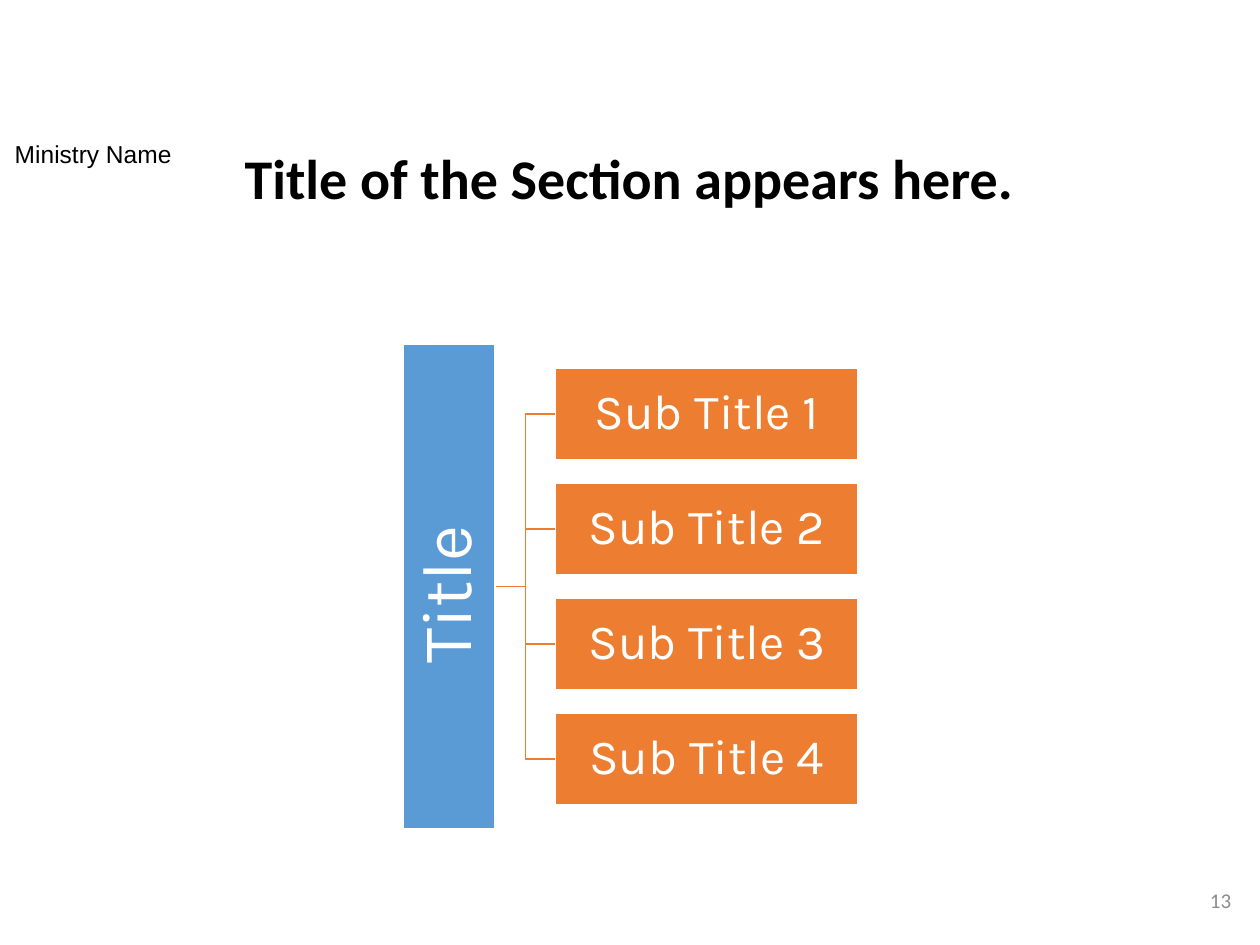
from dataclasses import dataclass

from pptx import Presentation
from pptx.dml.color import RGBColor
from pptx.enum.shapes import MSO_SHAPE
from pptx.enum.text import MSO_ANCHOR, MSO_AUTO_SIZE, PP_ALIGN
from pptx.util import Inches, Pt


@dataclass(frozen=True)
class Theme:
    blue: str = "5B9BD5"
    orange: str = "ED7D31"
    white: str = "FFFFFF"
    black: str = "000000"
    gray: str = "8C8C8C"
    head: str = "Calibri"
    label: str = "Arial"
    tree: str = "Karla"
    title: int = 32
    name: int = 14
    number: int = 12
    root: int = 40
    leaf: int = 28
    line: int = 1


THEME = Theme()


def color(code):
    return RGBColor.from_string(code)


def write(shape, text, face, size, ink, align=PP_ALIGN.CENTER,
          anchor=MSO_ANCHOR.MIDDLE, bold=False, inset=None):
    frame = shape.text_frame
    frame.text = text
    frame.word_wrap = True
    frame.auto_size = MSO_AUTO_SIZE.NONE
    frame.vertical_anchor = anchor
    if inset is not None:
        frame.margin_left = frame.margin_right = inset
        frame.margin_top = frame.margin_bottom = inset
    para = frame.paragraphs[0]
    para.alignment = align
    para.line_spacing = 0.9
    para.space_before = Pt(0)
    font = para.runs[0].font
    font.name, font.size, font.bold = face, Pt(size), bold
    font.color.rgb = color(ink)


def add_title(slide, left, top, width, height):
    title = slide.shapes.title
    title.left, title.top, title.width, title.height = left, top, width, height
    write(title, "Title of the Section appears here.", THEME.head, THEME.title,
          THEME.black, anchor=MSO_ANCHOR.TOP, bold=True)


def add_name(slide, left, top, width, height):
    box = slide.shapes.add_textbox(left, top, width, height)
    write(box, "Ministry Name", THEME.label, THEME.name, THEME.black,
          anchor=MSO_ANCHOR.TOP)


def add_number(slide, left, top, width, height):
    box = slide.shapes.add_textbox(left, top, width, height)
    write(box, "13", THEME.head, THEME.number, THEME.gray, PP_ALIGN.RIGHT)


def add_block(slide, text, size, fill, inset, left, top, width, height):
    block = slide.shapes.add_shape(MSO_SHAPE.RECTANGLE, left, top, width, height)
    block.shadow.inherit = False
    block.fill.solid()
    block.fill.fore_color.rgb = color(fill)
    block.line.color.rgb = color(THEME.white)
    block.line.width = Pt(THEME.line)
    write(block, text, THEME.tree, size, THEME.white, inset=inset)
    return block


def add_branch(slide, left, start, right, end):
    """Draw an elbow from (left, start) to (right, end)."""
    mid = (left + right) // 2
    pen = slide.shapes.build_freeform(left, start)
    pen.add_line_segments([(mid, start), (mid, end), (right, end)], close=False)
    branch = pen.convert_to_shape()
    branch.shadow.inherit = False
    branch.fill.background()
    branch.line.color.rgb = color(THEME.orange)
    branch.line.width = Pt(THEME.line)


def add_tree(slide, root, leaves, left, top, width, height):
    """Place a root bar read upward, with its leaves stacked at the right."""
    thick, wide, pad = Inches(0.73), Inches(2.4), Inches(0.19)
    middle = top + height // 2
    edge = left + width - wide
    pitch = (height - 2 * pad - thick) // (len(leaves) - 1)
    tops = [top + pad + row * pitch for row in range(len(leaves))]

    for y in tops:
        add_branch(slide, left + thick, middle, edge, y + thick // 2)
    bar = add_block(slide, root, THEME.root, THEME.blue, Inches(0.03),
                    left + (thick - height) // 2, middle - thick // 2,
                    height, thick)
    bar.rotation = 270
    for text, y in zip(leaves, tops):
        add_block(slide, text, THEME.leaf, THEME.orange, Inches(0.02),
                  edge, y, wide, thick)


def main():
    deck = Presentation()
    deck.slide_width, deck.slide_height = Inches(10), Inches(7.5)
    slide = deck.slides.add_slide(deck.slide_layouts[5])
    add_number(slide, Inches(7.62), Inches(6.96), Inches(2.25), Inches(0.4))
    add_title(slide, Inches(1.65), Inches(1.15), Inches(6.69), Inches(0.79))
    add_name(slide, Inches(0), Inches(1.08), Inches(1.48), Inches(0.65))
    add_tree(slide, "Title ", [f"Sub Title {n}" for n in range(1, 5)],
             Inches(3.2), Inches(2.73), Inches(3.61), Inches(3.85))
    deck.save("out.pptx")


if __name__ == "__main__":
    main()
